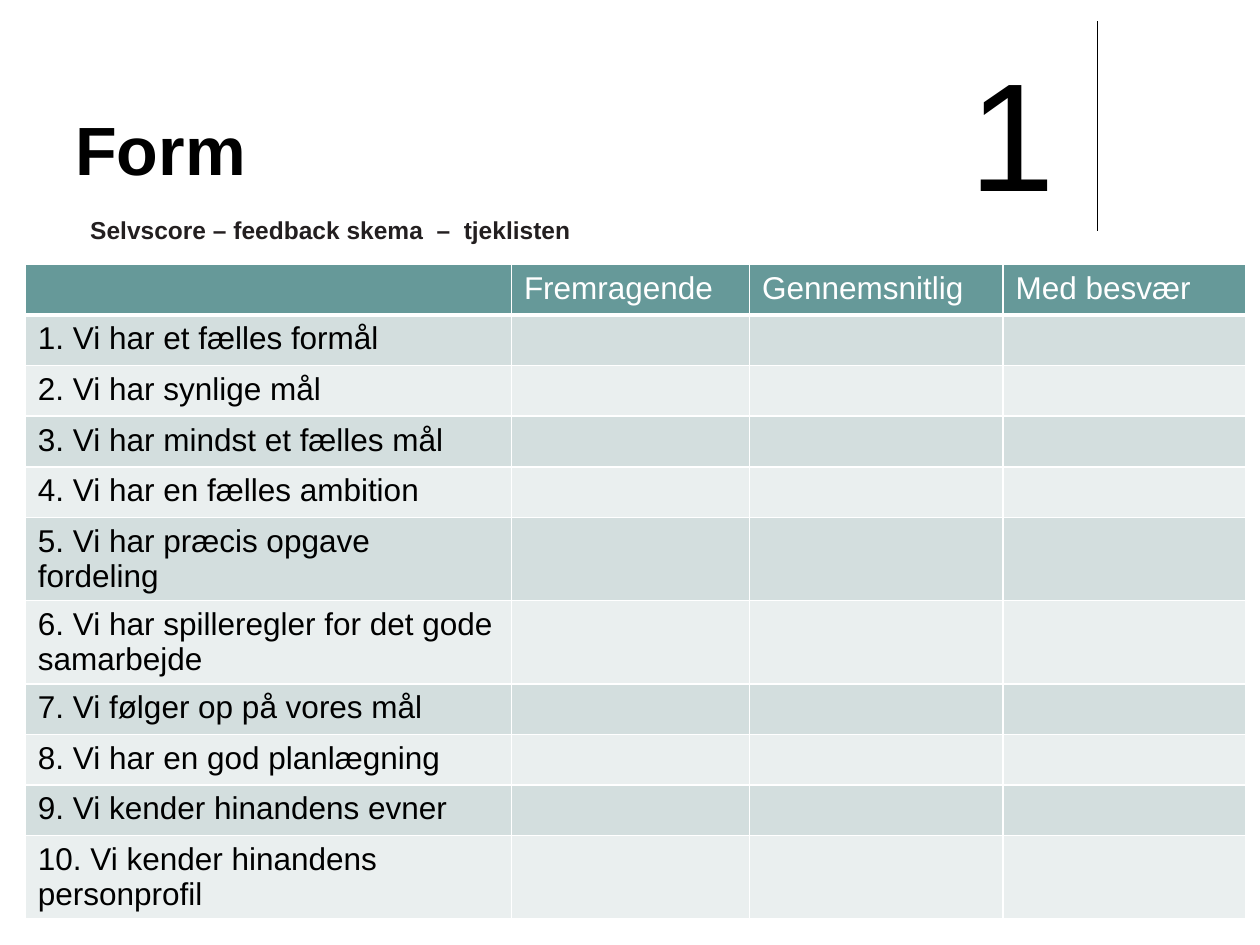
from dataclasses import dataclass, field

from lxml import etree
from pptx import Presentation
from pptx import util as u
from pptx.dml.color import RGBColor
from pptx.enum import shapes, text
from pptx.oxml.ns import qn

COLORS = {
    "black": "000000",
    "white": "FFFFFF",
    "subtitle": "231F20",
    "header": "669999",
    "odd": "D3DEDE",
    "even": "EAEFEF",
}
FONT = "Arial"
HEADERS = ["", "Fremragende", "Gennemsnitlig", "Med besvær"]
STATEMENTS = [
    "Vi har et fælles formål",
    "Vi har synlige mål",
    "Vi har mindst et fælles mål",
    "Vi har en fælles ambition",
    "Vi har præcis opgave fordeling",
    "Vi har spilleregler for det gode samarbejde",
    "Vi følger op på vores mål",
    "Vi har en god planlægning",
    "Vi kender hinandens evner",
    "Vi kender hinandens personprofil",
]
COLUMN_WIDTHS = [9.8, 4.8, 5.11, 4.9]
ROW_HEIGHT = 1.02


@dataclass
class Label:
    text: str
    left: float
    top: float
    width: float
    height: float
    size: float
    color: str = "black"
    bold: bool = False
    frame: dict = field(default_factory=dict)


LABELS = [
    Label("Form", 1.27, 0.33, 20.96, 3.61, 39, bold=True,
          frame={"word_wrap": True, "vertical_anchor": text.MSO_ANCHOR.BOTTOM}),
    Label("Selvscore – feedback skema  –  tjeklisten", 1.57, 4.17, 10.24, 0.94, 14,
          "subtitle", True,
          {"word_wrap": False, "vertical_anchor": text.MSO_ANCHOR.MIDDLE}),
    Label("1", 19.3, 0.33, 2.26, 4.01, 88,
          frame={"word_wrap": False, "margin_top": u.Cm(0.43), "margin_bottom": 0}),
]


def rgb(name: str) -> RGBColor:
    return RGBColor.from_string(COLORS[name])


def write(tf, content: str, size: float, color: str, bold: bool = False) -> None:
    p = tf.paragraphs[0]
    target = p
    if content:
        target = p.add_run()
        target.text = content
    formats = {"name": FONT, "size": u.Pt(size), "bold": bold}
    for name, value in formats.items():
        setattr(target.font, name, value)
    target.font.color.rgb = rgb(color)


def add_label(s, label: Label) -> None:
    sp = s.shapes.add_textbox(*map(u.Cm, (label.left, label.top, label.width, label.height)))
    for name, value in label.frame.items():
        setattr(sp.text_frame, name, value)
    write(sp.text_frame, label.text, label.size, label.color, label.bold)


def add_borders(cell, bottom: float) -> None:
    """Give the cell white borders; call before its fill is set, as the XML order requires."""
    tc_pr = cell._tc.get_or_add_tcPr()
    for side, width in {"L": 1, "R": 1, "T": 1, "B": bottom}.items():
        ln = etree.SubElement(tc_pr, qn(f"a:ln{side}"), w=str(u.Pt(width)))
        fill = etree.SubElement(ln, qn("a:solidFill"))
        etree.SubElement(fill, qn("a:srgbClr"), val=COLORS["white"])


def add_score_table(s) -> None:
    rows = [HEADERS] + [[f"{n}. {line}", "", "", ""] for n, line in enumerate(STATEMENTS, 1)]
    frame = s.shapes.add_table(
        len(rows), len(HEADERS), u.Cm(0.51), u.Cm(5.33),
        u.Cm(sum(COLUMN_WIDTHS)), u.Cm(ROW_HEIGHT * len(rows)))
    table = frame.table
    table.first_row = True
    table.horz_banding = False
    for column, width in zip(table.columns, COLUMN_WIDTHS):
        column.width = u.Cm(width)
    for i, values in enumerate(rows):
        table.rows[i].height = u.Cm(ROW_HEIGHT)
        is_header = i == 0
        fill = "header" if is_header else "odd" if i % 2 else "even"
        for j, value in enumerate(values):
            cell = table.cell(i, j)
            add_borders(cell, bottom=3 if is_header else 1)
            cell.fill.solid()
            cell.fill.fore_color.rgb = rgb(fill)
            write(cell.text_frame, value, 18, "white" if is_header else "black")


def add_divider(s) -> None:
    line = s.shapes.add_connector(
        shapes.MSO_CONNECTOR.STRAIGHT, u.Cm(22.12), u.Cm(0.43), u.Cm(22.12), u.Cm(4.65))
    line.line.color.rgb = rgb("black")
    line.line.width = u.Pt(0.75)
    etree.SubElement(line._element.spPr, qn("a:effectLst"))


def main() -> None:
    prs = Presentation()
    prs.slide_width, prs.slide_height = u.Cm(25.4), u.Cm(19.05)
    s = prs.slides.add_slide(prs.slide_layouts[6])
    add_divider(s)
    add_score_table(s)
    for label in LABELS:
        add_label(s, label)
    prs.save("out.pptx")


if __name__ == "__main__":
    main()
